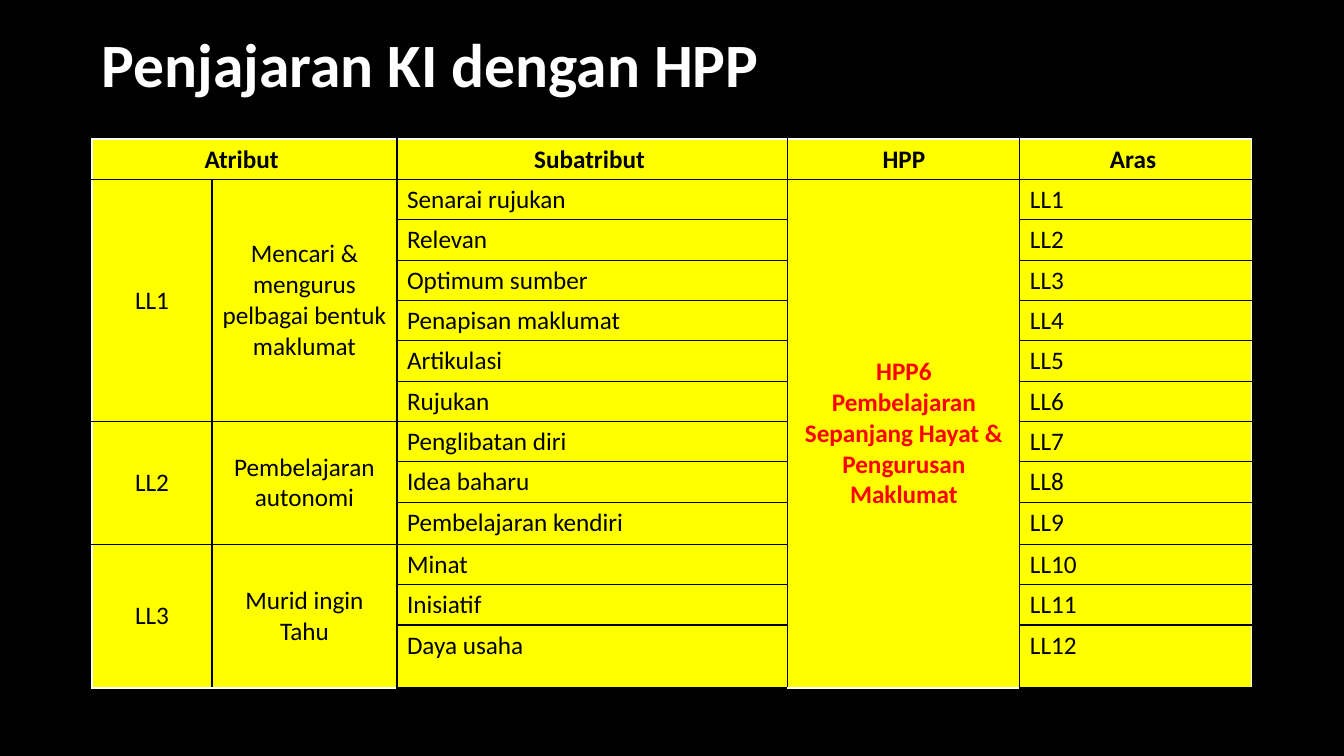
from dataclasses import dataclass

from lxml.etree import SubElement
from pptx import Presentation
from pptx.dml.color import RGBColor
from pptx.enum.text import MSO_ANCHOR, PP_ALIGN
from pptx.oxml.ns import qn
from pptx.util import Emu, Pt

WIDTH, HEIGHT = 1344, 756
SCALE = 12192000 / WIDTH
FONT = "Calibri"
BLACK, WHITE, YELLOW, RED = "000000", "FFFFFF", "FFFF00", "FF0000"
PLAIN_STYLE = "{2D5ABB26-0587-4C30-8999-92F81FD0307C}"

COLS = [120, 185, 391, 232, 232]
ROWS = [39] + [38] * 8 + [42, 40, 38, 63]
TOPICS = [
    "Senarai rujukan", "Relevan", "Optimum sumber", "Penapisan maklumat",
    "Artikulasi", "Rujukan", "Penglibatan diri", "Idea baharu",
    "Pembelajaran kendiri", "Minat", "Inisiatif", "Daya usaha",
]
GROUPS = [
    ("Mencari & mengurus pelbagai bentuk maklumat", 6),
    ("Pembelajaran autonomi", 3),
    ("Murid ingin Tahu", 3),
]


@dataclass
class Block:
    """A table cell, or several merged into one."""
    row: int
    col: int
    lines: list[str]
    tall: int = 1
    wide: int = 1
    center: bool = False
    middle: bool = False
    bold: bool = False
    color: str = BLACK


def px(value: int) -> Emu:
    return Emu(round(value * SCALE))


def rgb(code: str) -> RGBColor:
    return RGBColor.from_string(code)


def add_run(para, text: str, size: int, color: str, bold: bool) -> None:
    run = para.add_run()
    run.text = text
    run.font.name = FONT
    run.font.size = Pt(size)
    run.font.bold = bold
    run.font.color.rgb = rgb(color)


def set_cell(cell, edges: dict[str, str]) -> None:
    """Fill a cell and draw the given edges; borders must precede the fill."""
    props = cell._tc.get_or_add_tcPr()
    for side, color in edges.items():
        line = SubElement(props, qn(f"a:ln{side}"), w=str(Pt(1)))
        fill = SubElement(line, qn("a:solidFill"))
        SubElement(fill, qn("a:srgbClr"), val=color)
    cell.fill.solid()
    cell.fill.fore_color.rgb = rgb(YELLOW)


def draw_block(table, block: Block) -> None:
    bottom = block.row + block.tall - 1
    right = block.col + block.wide - 1
    last = bottom == len(ROWS) - 1
    edges = {
        "L": WHITE if block.col == 0 else BLACK,
        "R": WHITE if right == len(COLS) - 1 else BLACK,
        "T": WHITE if block.row == 0 else BLACK,
        "B": WHITE if last and block.tall > 1 else BLACK,
    }
    first = table.cell(block.row, block.col)
    if block.tall * block.wide > 1:
        first.merge(table.cell(bottom, right))
    for row in range(block.row, bottom + 1):
        for col in range(block.col, right + 1):
            origin = (row, col) == (block.row, block.col)
            outer = {"L": col == block.col, "R": col == right,
                     "T": row == block.row, "B": row == bottom}
            set_cell(table.cell(row, col),
                     {side: edges[side] for side in edges if origin or outer[side]})
    if block.middle:
        first.vertical_anchor = MSO_ANCHOR.MIDDLE
    frame = first.text_frame
    for index, text in enumerate(block.lines):
        para = frame.add_paragraph() if index else frame.paragraphs[0]
        para.alignment = PP_ALIGN.CENTER if block.center else PP_ALIGN.LEFT
        add_run(para, text, 18, block.color, block.bold)


def list_blocks() -> list[Block]:
    heads = [("Atribut ", 0, 2), ("Subatribut ", 2, 1), ("HPP", 3, 1), ("Aras ", 4, 1)]
    blocks = [Block(0, col, [text], wide=wide, center=True, bold=True)
              for text, col, wide in heads]
    row = 1
    for number, (text, tall) in enumerate(GROUPS, 1):
        for col, label in enumerate([f"LL{number}", text]):
            blocks.append(Block(row, col, [label], tall=tall, center=True, middle=True))
        row += tall
    for row, topic in enumerate(TOPICS, 1):
        blocks += [Block(row, 2, [topic]), Block(row, 4, [f"LL{row}"])]
    blocks.append(Block(
        1, 3, ["HPP6", "Pembelajaran Sepanjang Hayat & Pengurusan Maklumat"],
        tall=len(TOPICS), center=True, middle=True, bold=True, color=RED))
    return blocks


def add_title(slide) -> None:
    frame = slide.shapes.add_textbox(px(92), px(15), px(1160), px(105)).text_frame
    frame.word_wrap = True
    frame.vertical_anchor = MSO_ANCHOR.MIDDLE
    para = frame.paragraphs[0]
    para.line_spacing = 0.9
    add_run(para, "Penjajaran KI dengan HPP", 44, WHITE, True)


def add_grid(slide) -> None:
    shape = slide.shapes.add_table(len(ROWS), len(COLS), px(92), px(139),
                                   px(sum(COLS)), px(sum(ROWS)))
    table = shape.table
    table.first_row = table.horz_banding = False
    table._tbl.tblPr.find(qn("a:tableStyleId")).text = PLAIN_STYLE
    for col, width in zip(table.columns, COLS):
        col.width = px(width)
    for row, height in zip(table.rows, ROWS):
        row.height = px(height)
    for block in list_blocks():
        draw_block(table, block)


def main() -> None:
    deck = Presentation()
    deck.slide_width, deck.slide_height = px(WIDTH), px(HEIGHT)
    slide = deck.slides.add_slide(deck.slide_layouts[6])
    slide.background.fill.solid()
    slide.background.fill.fore_color.rgb = rgb(BLACK)
    add_title(slide)
    add_grid(slide)
    deck.save("out.pptx")


if __name__ == "__main__":
    main()
